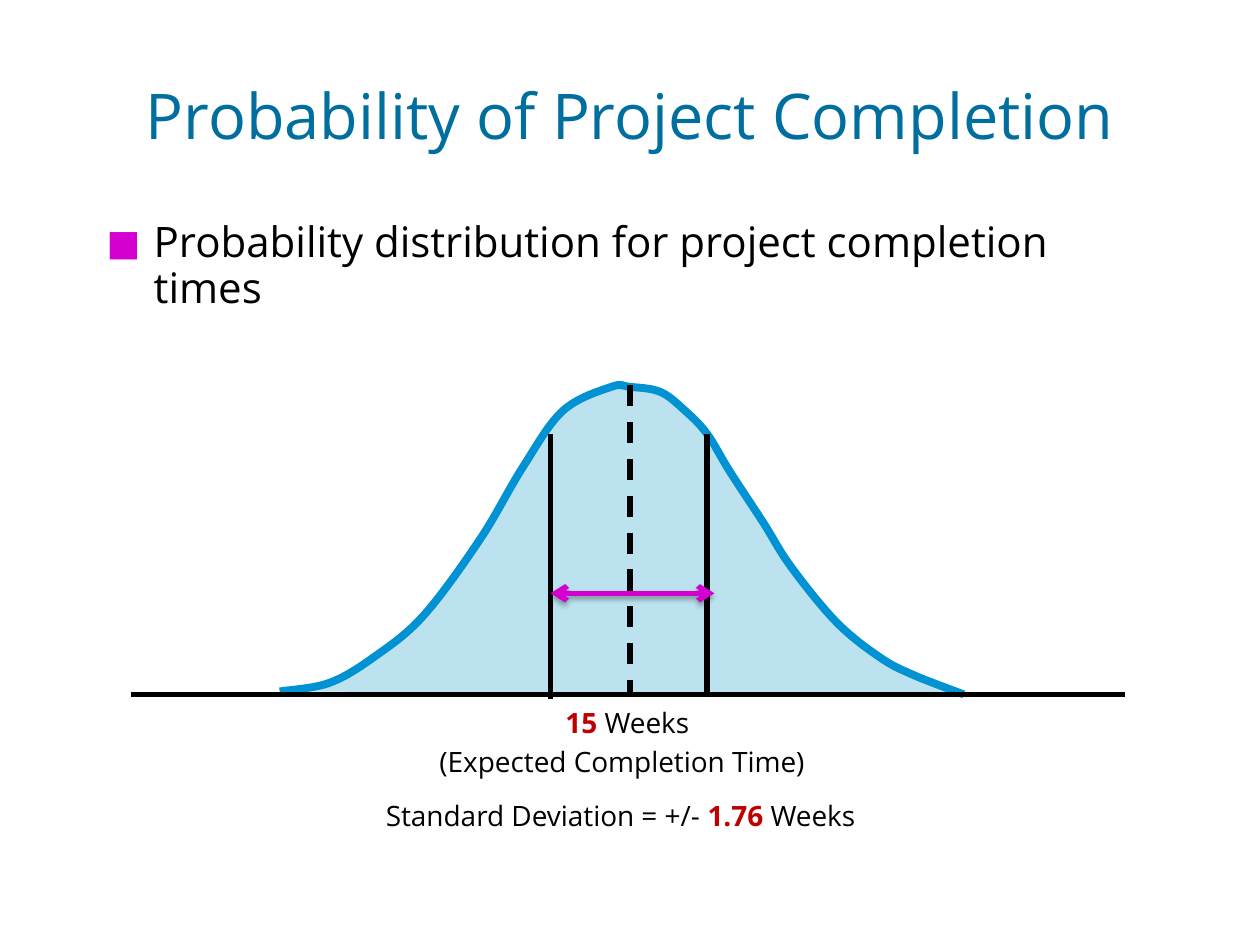
"""Build a slide showing the probability distribution of project completion times."""
from lxml.etree import SubElement
from pptx import Presentation
from pptx.dml.color import RGBColor
from pptx.enum.dml import MSO_LINE_DASH_STYLE as Dash
from pptx.enum.shapes import MSO_CONNECTOR as Connector
from pptx.enum.text import MSO_ANCHOR as Anchor, MSO_AUTO_SIZE as AutoSize, PP_ALIGN as Align
from pptx.oxml.ns import qn
from pptx.util import Cm, Pt

BLACK = RGBColor(0x00, 0x00, 0x00)
TITLE_BLUE = RGBColor(0x00, 0x6E, 0x9E)
CURVE_BLUE = RGBColor(0x00, 0x92, 0xD3)
AREA_BLUE = RGBColor(0xBB, 0xE2, 0xEE)
MAGENTA = RGBColor(0xD3, 0x00, 0xD0)
RED = RGBColor(0xC0, 0x00, 0x00)

presentation = Presentation()
presentation.slide_width, presentation.slide_height = Cm(25.4), Cm(19.05)
slide = presentation.slides.add_slide(presentation.slide_layouts[6])


def add_text(box, runs, size, frame_format, paragraph_format):
    shape = slide.shapes.add_textbox(*(Cm(length) for length in box))
    frame = shape.text_frame
    for name, value in frame_format.items():
        setattr(frame, name, value)
    paragraph = frame.paragraphs[0]
    for name, value in paragraph_format.items():
        setattr(paragraph, name, value)
    for text, color, bold in runs:
        run = paragraph.add_run()
        run.text = text
        run.font.color.rgb = color
        for name, value in {"name": "Open Sans", "size": Pt(size), "bold": bold}.items():
            setattr(run.font, name, value)
    return paragraph


def add_line(start, end, color=BLACK, dash=None):
    ends = [Cm(length) for length in (*start, *end)]
    connector = slide.shapes.add_connector(Connector.STRAIGHT, *ends)
    connector.line.color.rgb = color
    connector.line.width = Pt(3)
    if dash:
        connector.line.dash_style = dash
    effects = SubElement(connector._element.spPr, qn("a:effectLst"))
    return connector, effects


curve_points = [
    (5.64, 13.94), (6.63, 13.77), (7.52, 13.26), (8.53, 12.42), (9.68, 10.87),
    (10.54, 9.42), (11.35, 8.28), (12.32, 7.8), (12.7, 7.8), (13.31, 7.9),
    (13.79, 8.26), (14.25, 8.74), (14.71, 9.5), (15.39, 10.54), (15.95, 11.43),
    (16.87, 12.55), (17.75, 13.26), (18.42, 13.61), (19.43, 14),
]
points = [(Cm(x), Cm(y)) for x, y in curve_points]
left, top = (min(values) for values in zip(*points))
local = [(x - left, y - top) for x, y in points]
padded = [local[0], *local, local[-1]]
bell = slide.shapes.add_group_shape()
for closed in (True, False):
    builder = bell.shapes.build_freeform(*points[0])
    builder.add_line_segments(points[1:], close=closed)
    shape = builder.convert_to_shape()
    shape.shadow.inherit = False
    if closed:
        shape.fill.solid()
        shape.fill.fore_color.rgb = AREA_BLUE
        shape.line.fill.background()
    else:
        shape.fill.background()
        shape.line.color.rgb = CURVE_BLUE
        shape.line.width = Pt(4.5)
    segments = list(shape._element.iter(qn("a:lnTo")))
    for segment, before, start, end, after in zip(
        segments, padded, padded[1:], padded[2:], padded[3:]
    ):
        first = [s + (e - b) / 6 for b, s, e in zip(before, start, end)]
        second = [e - (a - s) / 6 for s, e, a in zip(start, end, after)]
        segment.tag = qn("a:cubicBezTo")
        segment.clear()
        for x, y in (first, second, end):
            SubElement(segment, qn("a:pt"), x=str(round(x)), y=str(round(y)))

add_text(
    (1.9, 1.09, 21.6, 2.62), [("Probability of Project Completion", TITLE_BLUE, False)], 36,
    {"word_wrap": True, "vertical_anchor": Anchor.MIDDLE},
    {"alignment": Align.CENTER, "line_spacing": 0.9},
)
bullet = add_text(
    (1.9, 4.34, 21.6, 2.34),
    [("Probability distribution for project completion times", BLACK, False)], 24,
    {"word_wrap": True}, {"line_spacing": 0.9},
)
properties = bullet._p.get_or_add_pPr()
properties.set("marL", str(Cm(0.95)))
properties.set("indent", str(-Cm(0.95)))
bullet_color = SubElement(properties, qn("a:buClr"))
SubElement(bullet_color, qn("a:srgbClr"), val=str(MAGENTA))
SubElement(properties, qn("a:buSzPct"), val="85000")
SubElement(properties, qn("a:buFont"), typeface="Open Sans")
SubElement(properties, qn("a:buChar"), char="■")

axis_y = 14
add_line((2.64, axis_y), (22.68, axis_y))
add_line((12.7, 7.77), (12.7, axis_y), dash=Dash.DASH)

deviation = [("Standard Deviation = +/- ", BLACK, False), ("1.76", RED, True), (" Weeks", BLACK, False)]
expected = [("(Expected Completion Time)", BLACK, False)]
weeks = [("15 ", RED, True), ("Weeks", BLACK, False)]
for box, runs, wrap, alignment in (
    ((3.71, 15.98, 17.6, 0.94), deviation, True, Align.CENTER),
    ((8.61, 14.88, 8.33, 0.94), expected, False, Align.LEFT),
    ((11.15, 14.1, 3.25, 0.94), weeks, False, Align.LEFT),
):
    add_text(box, runs, 16, {"word_wrap": wrap, "auto_size": AutoSize.SHAPE_TO_FIT_TEXT},
             {"alignment": alignment})

add_line((14.25, 8.74), (14.25, axis_y))
add_line((11.1, 8.74), (11.1, 14.1))
spread, effects = add_line((11.1, 11.96), (14.4, 11.96), MAGENTA)
for tag in ("a:headEnd", "a:tailEnd"):
    SubElement(spread.line._get_or_add_ln(), qn(tag), type="arrow")
shadow = SubElement(effects, qn("a:outerShdw"), blurRad=str(Pt(3.1)), dist=str(Pt(1.8)),
                    dir="5400000", rotWithShape="0")
shadow_color = SubElement(shadow, qn("a:srgbClr"), val=str(BLACK))
SubElement(shadow_color, qn("a:alpha"), val="35000")

presentation.save("out.pptx")
